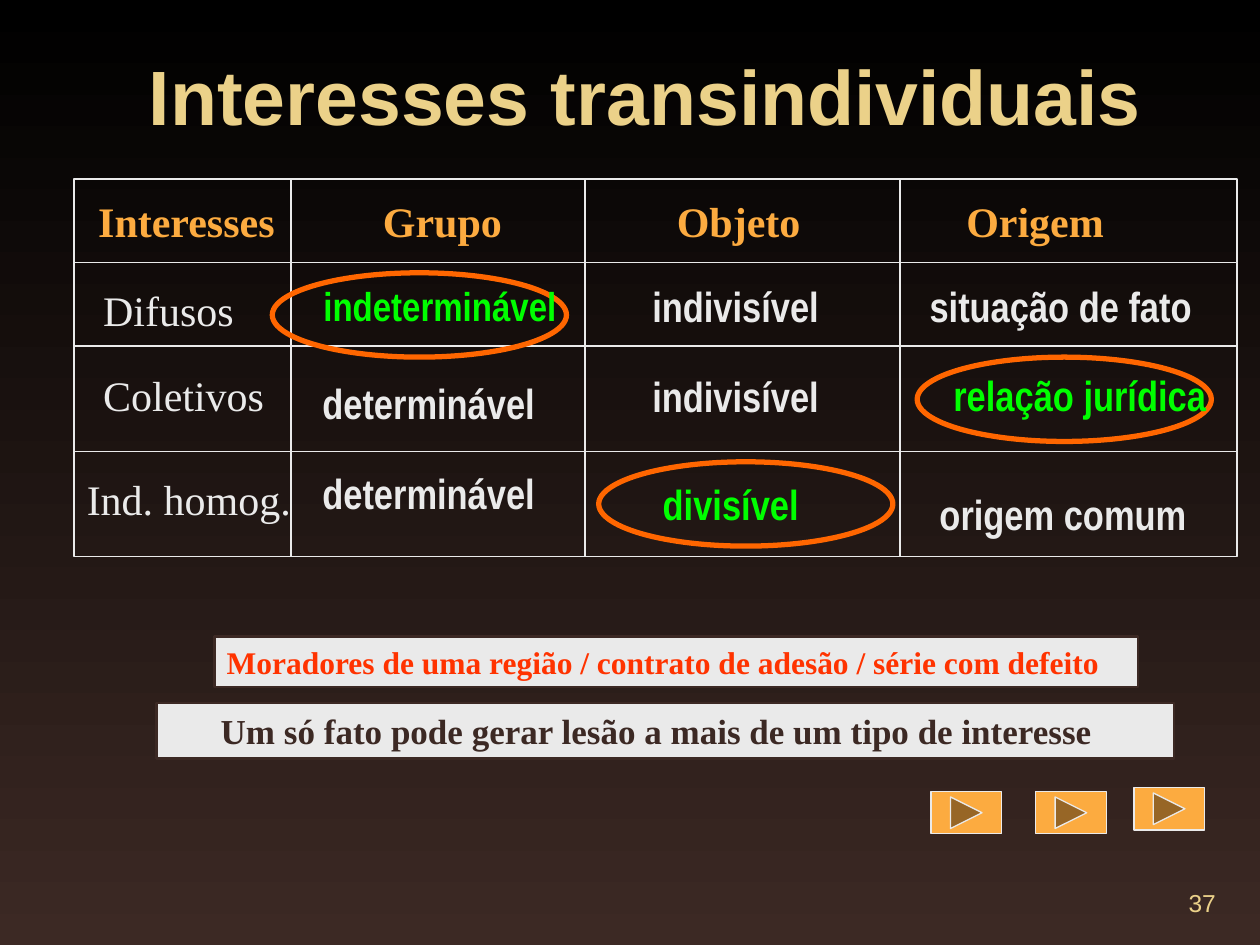
from lxml import etree
from pptx import Presentation
from pptx.dml.color import RGBColor
from pptx.enum.shapes import MSO_CONNECTOR, MSO_SHAPE
from pptx.enum.text import MSO_ANCHOR, PP_ALIGN
from pptx.oxml.ns import qn
from pptx.util import Cm, Pt

RECTANGLE, ELLIPSE = MSO_SHAPE.RECTANGLE, MSO_SHAPE.OVAL
NEXT_BUTTON = MSO_SHAPE.ACTION_BUTTON_FORWARD_OR_NEXT
STRAIGHT = MSO_CONNECTOR.STRAIGHT
TOP, MIDDLE, BOTTOM = MSO_ANCHOR.TOP, MSO_ANCHOR.MIDDLE, MSO_ANCHOR.BOTTOM
LEFT, CENTER, RIGHT = PP_ALIGN.LEFT, PP_ALIGN.CENTER, PP_ALIGN.RIGHT
SERIF, SANS, NARROW = "Times New Roman", "Arial", "Arial Narrow"
PALE, GOLD, ORANGE, GREEN, BROWN = "EAEAEA", "EBD189", "FCAB40", "00FF00", "3C2924"

deck = Presentation()
deck.slide_width, deck.slide_height = Cm(25.4), Cm(19.05)
page = deck.slides.add_slide(deck.slide_layouts[5])


def color(value):
    return RGBColor.from_string(value)


def write(box, text, font=NARROW, size=24, ink=PALE, bold=True, align=LEFT,
          anchor=TOP, wrap=True, indent=0.25):
    frame = box.text_frame
    frame.word_wrap = wrap
    frame.vertical_anchor = anchor
    frame.margin_left = Cm(indent)
    frame.text = text
    for number, para in enumerate(frame.paragraphs):
        para.alignment = align
        if number:
            para.line_spacing = 1.3
            para.space_before = Pt(14)
        for span in para.runs:
            span.font.name = font
            span.font.size = Pt(size)
            span.font.bold = bold
            span.font.color.rgb = color(ink)


fill = page.background.fill
fill.gradient()
fill.gradient_angle = 270
for stop, shade in zip(fill.gradient_stops, ("000000", BROWN)):
    stop.color.rgb = color(shade)

title = page.shapes.title
title.left, title.top, title.width, title.height = Cm(2.75), Cm(0.64), Cm(21.59), Cm(2.54)
write(title, "Interesses transindividuais", font=SANS, size=44, ink=GOLD, anchor=MIDDLE)

number_box = page.shapes.add_textbox(Cm(19.47), Cm(17.35), Cm(5.29), Cm(1.27))
write(number_box, "37", font=SANS, size=14, ink=GOLD, bold=False, align=RIGHT, anchor=BOTTOM)

column_edges = [1.5, 5.87, 11.79, 18.14, 24.94]
row_edges = [3.61, 5.29, 6.98, 9.1, 11.22]
left, right = column_edges[0], column_edges[-1]
top, bottom = row_edges[0], row_edges[-1]

outline = page.shapes.add_shape(RECTANGLE, Cm(left), Cm(top), Cm(right - left), Cm(bottom - top))
outline.shadow.inherit = False
outline.fill.background()
outline.line.color.rgb = color(PALE)
outline.line.width = Pt(1)

dividers = [(left, y, right, y) for y in row_edges[1:-1]]
dividers += [(x, top, x, bottom) for x in column_edges[1:-1]]
for ends in dividers:
    divider = page.shapes.add_connector(STRAIGHT, *[Cm(value) for value in ends])
    divider.line.color.rgb = color(PALE)
    divider.line.width = Pt(1)
    etree.SubElement(divider._element.spPr, qn("a:effectLst"))

headings = [
    ("Interesses", 1.73, 4.09, LEFT),
    ("Grupo", 7.47, 2.92, LEFT),
    ("Objeto", 13.39, 3, CENTER),
    ("Origem", 19.23, 3.28, LEFT),
]
for text, x, width, align in headings:
    box = page.shapes.add_textbox(Cm(x), Cm(3.81), Cm(width), Cm(1.27))
    write(box, text, font=SERIF, ink=ORANGE, align=align, wrap=False)

row_labels = [("Difusos", 1.83, 5.61), ("Coletivos", 1.83, 7.32), ("Ind. homog.", 1.5, 9.42)]
for text, x, y in row_labels:
    box = page.shapes.add_textbox(Cm(x), Cm(y), Cm(5), Cm(1.27))
    write(box, text, font=SERIF, bold=False)

for x, y in [(12.07, 9.31), (5.49, 5.5), (18.49, 7.2)]:
    ring = page.shapes.add_shape(ELLIPSE, Cm(x), Cm(y), Cm(5.93), Cm(1.7))
    ring.shadow.inherit = False
    ring.fill.background()
    ring.line.color.rgb = color("FF6600")
    ring.line.width = Pt(3)

answers = [
    ("divisível", 13.11, 9.53, 5.21, 1.27, GREEN, 24),
    ("indivisível\nindivisível", 12.9, 5.54, 5.21, 3.12, PALE, 24),
    ("indeterminável", 6.27, 5.54, 7.01, 1.22, GREEN, 23),
    ("determinável\ndeterminável", 6.25, 7.49, 6.81, 3.1, PALE, 24),
    ("relação jurídica", 18.97, 7.32, 5.99, 1.27, GREEN, 24),
    ("origem comum", 18.69, 9.73, 6.2, 1.27, PALE, 24),
    ("situação de fato", 18.49, 5.54, 6.2, 1.27, PALE, 24),
]
for text, x, y, width, height, ink, size in answers:
    box = page.shapes.add_textbox(Cm(x), Cm(y), Cm(width), Cm(height))
    write(box, text, ink=ink, size=size)

notes = [
    ("Moradores de uma região / contrato de adesão / série com defeito",
     4.32, 12.83, 18.62, 1.02, 18, "FF3300", 0.25),
    ("Um só fato pode gerar lesão a mais de um tipo de interesse",
     3.15, 14.17, 20.52, 1.12, 20, BROWN, 1.3),
]
for text, x, y, width, height, size, ink, indent in notes:
    banner = page.shapes.add_shape(RECTANGLE, Cm(x), Cm(y), Cm(width), Cm(height))
    banner.shadow.inherit = False
    banner.fill.solid()
    banner.fill.fore_color.rgb = color(PALE)
    banner.line.color.rgb = color(BROWN)
    banner.line.width = Pt(1.5)
    write(banner, text, font=SERIF, size=size, ink=ink, indent=indent)

for x, y in [(22.86, 15.88), (20.88, 15.96), (18.77, 15.96)]:
    button = page.shapes.add_shape(NEXT_BUTTON, Cm(x), Cm(y), Cm(1.42), Cm(0.85))
    button.shadow.inherit = False
    button.fill.solid()
    button.fill.fore_color.rgb = color(ORANGE)
    button.line.color.rgb = color(PALE)
    button.line.width = Pt(0.75)

deck.save("out.pptx")
